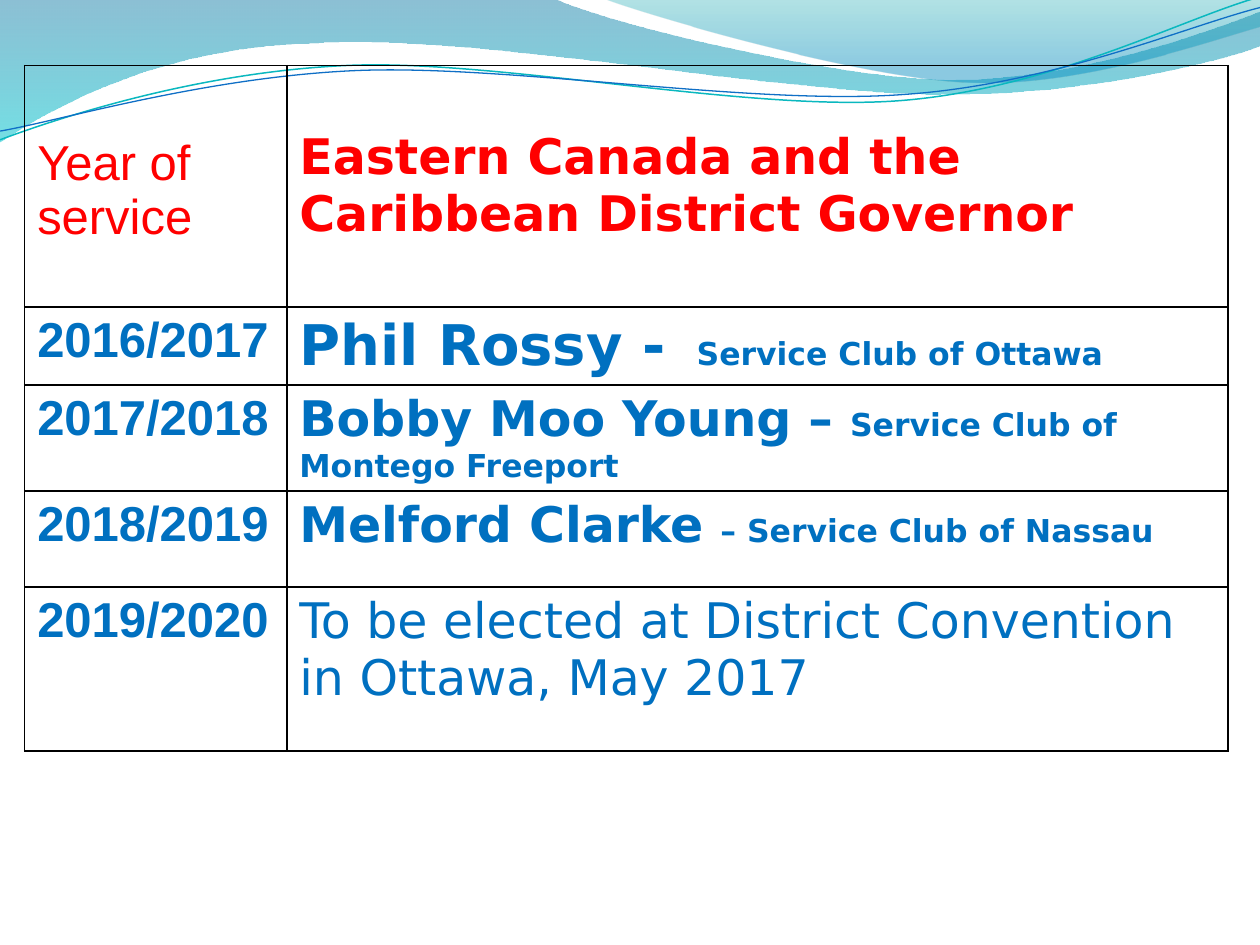
"""Build the slide listing district governors by year of service."""
from dataclasses import dataclass

from lxml.etree import SubElement
from pptx import Presentation
from pptx.dml.color import RGBColor
from pptx.oxml.ns import qn
from pptx.shapes.autoshape import Shape
from pptx.slide import Slide
from pptx.table import _Cell
from pptx.util import Pt

RED = RGBColor(0xFF, 0x00, 0x00)
BLUE = RGBColor(0x00, 0x70, 0xC0)
BLACK = RGBColor(0x00, 0x00, 0x00)
DEEP_BLUE = RGBColor(0x00, 0x74, 0xA1)
CYAN = RGBColor(0x00, 0xC6, 0xCF)
TEAL = RGBColor(0x00, 0xA1, 0xA9)
SKY = RGBColor(0x00, 0x8B, 0xBF)
TEAL_LINE = RGBColor(0x0A, 0xB8, 0xBF)
BLUE_LINE = RGBColor(0x0F, 0x6F, 0xC6)

YEAR_FONT = "Arial"
NAME_FONT = "DejaVu Sans"
TABLE_LEFT, TABLE_TOP = 14.1, 37.44
COLUMN_WIDTHS = (149.8, 537.8)

Point = tuple[float, float]
Segments = list[tuple[Point, ...]]


@dataclass(frozen=True)
class Stop:
    position: float
    color: RGBColor
    opacity: int


@dataclass(frozen=True)
class Band:
    segments: Segments
    stops: tuple[Stop, Stop]


@dataclass(frozen=True)
class Strand:
    segments: Segments
    color: RGBColor
    width: float


@dataclass(frozen=True)
class Phrase:
    text: str
    font: str = NAME_FONT
    size: float = 28
    bold: bool = True
    color: RGBColor = BLUE


@dataclass(frozen=True)
class Row:
    height: float
    year: Phrase
    governor: tuple[Phrase, ...]
    year_margin: float = 3.6
    governor_margin: float = 3.6


BANDS = (
    Band(
        [((0, 0),), ((316.8, -0.7),),
         ((342.7, 12.2), (478.1, 45.4), (545.8, 45.4)),
         ((614.2, 45.4), (689.8, 18.7), (720, 6.5)), ((720.7, 25.9),),
         ((707.8, 31.7), (626.4, 54.7), (537.1, 54)),
         ((447.8, 54), (275, 20.2), (185, 24.5)),
         ((92.9, 25.9), (33.1, 59.8), (-0.7, 81.4))],
        (Stop(0, DEEP_BLUE, 45), Stop(1, CYAN, 55)),
    ),
    Band(
        [((344.9, -0.7),),
         ((366.5, 7.9), (491, 44.6), (553.7, 46.8)),
         ((616.3, 49.7), (691.9, 23), (720, 15.1)), ((720, 0),)],
        (Stop(0, TEAL, 30), Stop(0.8, SKY, 45)),
    ),
)
STRANDS = (
    Strand(
        [((0, 79.9),), ((34.6, 67), (113.8, 41), (199.4, 37.4)),
         ((284.4, 33.8), (427, 64.1), (513.4, 57.6)),
         ((599.8, 51.1), (675.4, 10.8), (718.6, -1.4))],
        TEAL_LINE, 0.85,
    ),
    Strand(
        [((0, 74.9),), ((33.8, 69.1), (118.1, 43.9), (203.8, 40.3)),
         ((290.2, 36.7), (429.8, 60.5), (516.2, 54)),
         ((601.9, 48.2), (677.5, 15.1), (720, 4.3))],
        BLUE_LINE, 0.75,
    ),
)


def year(text: str) -> Phrase:
    return Phrase(text, YEAR_FONT)


ROWS = (
    Row(137.9, Phrase("Year of service", YEAR_FONT, bold=False, color=RED),
        (Phrase("Eastern Canada and the Caribbean District Governor", color=RED),),
        year_margin=40.2, governor_margin=36.4),
    Row(44.5, year("2016/2017"),
        (Phrase("Phil Rossy - ", size=32), Phrase(" Service Club of Ottawa", size=18))),
    Row(60.6, year("2017/2018"),
        (Phrase("Bobby Moo Young – "), Phrase("Service Club of Montego Freeport", size=18))),
    Row(54.9, year("2018/2019"),
        (Phrase("Melford Clarke "), Phrase("– Service Club of Nassau", size=18))),
    Row(93.7, year("2019/2020"),
        (Phrase("To be elected at District Convention in Ottawa, May 2017", bold=False),)),
)


def draw_outline(slide: Slide, segments: Segments, close: bool) -> Shape:
    start, *ends = [(Pt(segment[-1][0]), Pt(segment[-1][1])) for segment in segments]
    builder = slide.shapes.build_freeform(*start)
    builder.add_line_segments(ends, close=close)
    outline = builder.convert_to_shape()
    outline.shadow.inherit = False
    edges = list(outline.element.spPr.iter(qn("a:lnTo")))
    for edge, segment in zip(edges, segments[1:]):
        if len(segment) == 3:
            bend(edge, segment, outline)
    return outline


def bend(edge, segment: tuple[Point, ...], outline: Shape) -> None:
    curve = SubElement(edge.getparent(), qn("a:cubicBezTo"))
    for x, y in segment:
        SubElement(curve, qn("a:pt"), x=str(Pt(x) - outline.left), y=str(Pt(y) - outline.top))
    edge.getparent().replace(edge, curve)


def draw_band(slide: Slide, band: Band) -> None:
    wave = draw_outline(slide, band.segments, close=True)
    wave.line.fill.background()
    wave.fill.gradient()
    wave.fill.gradient_angle = 270
    for target, stop in zip(wave.fill.gradient_stops, band.stops):
        target.position = stop.position
        target.color.rgb = stop.color
    for color, stop in zip(wave.element.spPr.iter(qn("a:srgbClr")), band.stops):
        SubElement(color, qn("a:alpha"), val=str(stop.opacity * 1000))


def draw_strand(slide: Slide, strand: Strand) -> None:
    curve = draw_outline(slide, strand.segments, close=False)
    curve.fill.background()
    curve.line.color.rgb = strand.color
    curve.line.width = Pt(strand.width)


def fill_cell(cell: _Cell, phrases: tuple[Phrase, ...], margin_top: float) -> None:
    properties = cell._tc.get_or_add_tcPr()
    for side in ("lnL", "lnR", "lnT", "lnB"):
        border = SubElement(properties, qn(f"a:{side}"), w=str(Pt(1)))
        SubElement(SubElement(border, qn("a:solidFill")), qn("a:srgbClr"), val=str(BLACK))
    cell.fill.background()
    cell.margin_top = Pt(margin_top)
    paragraph = cell.text_frame.paragraphs[0]
    for phrase in phrases:
        run = paragraph.add_run()
        run.text = phrase.text
        run.font.name = phrase.font
        run.font.size = Pt(phrase.size)
        run.font.bold = phrase.bold
        run.font.color.rgb = phrase.color


def draw_governors(slide: Slide) -> None:
    governors = slide.shapes.add_table(
        len(ROWS), len(COLUMN_WIDTHS), Pt(TABLE_LEFT), Pt(TABLE_TOP),
        Pt(sum(COLUMN_WIDTHS)), Pt(sum(row.height for row in ROWS))).table
    governors.first_row = governors.horz_banding = False
    for column, width in zip(governors.columns, COLUMN_WIDTHS):
        column.width = Pt(width)
    for index, row in enumerate(ROWS):
        governors.rows[index].height = Pt(row.height)
        fill_cell(governors.cell(index, 0), (row.year,), row.year_margin)
        fill_cell(governors.cell(index, 1), row.governor, row.governor_margin)


def main() -> None:
    presentation = Presentation()
    presentation.slide_width, presentation.slide_height = Pt(720), Pt(540)
    slide = presentation.slides.add_slide(presentation.slide_layouts[6])
    for band in BANDS:
        draw_band(slide, band)
    for strand in STRANDS:
        draw_strand(slide, strand)
    draw_governors(slide)
    presentation.save("out.pptx")


if __name__ == "__main__":
    main()
